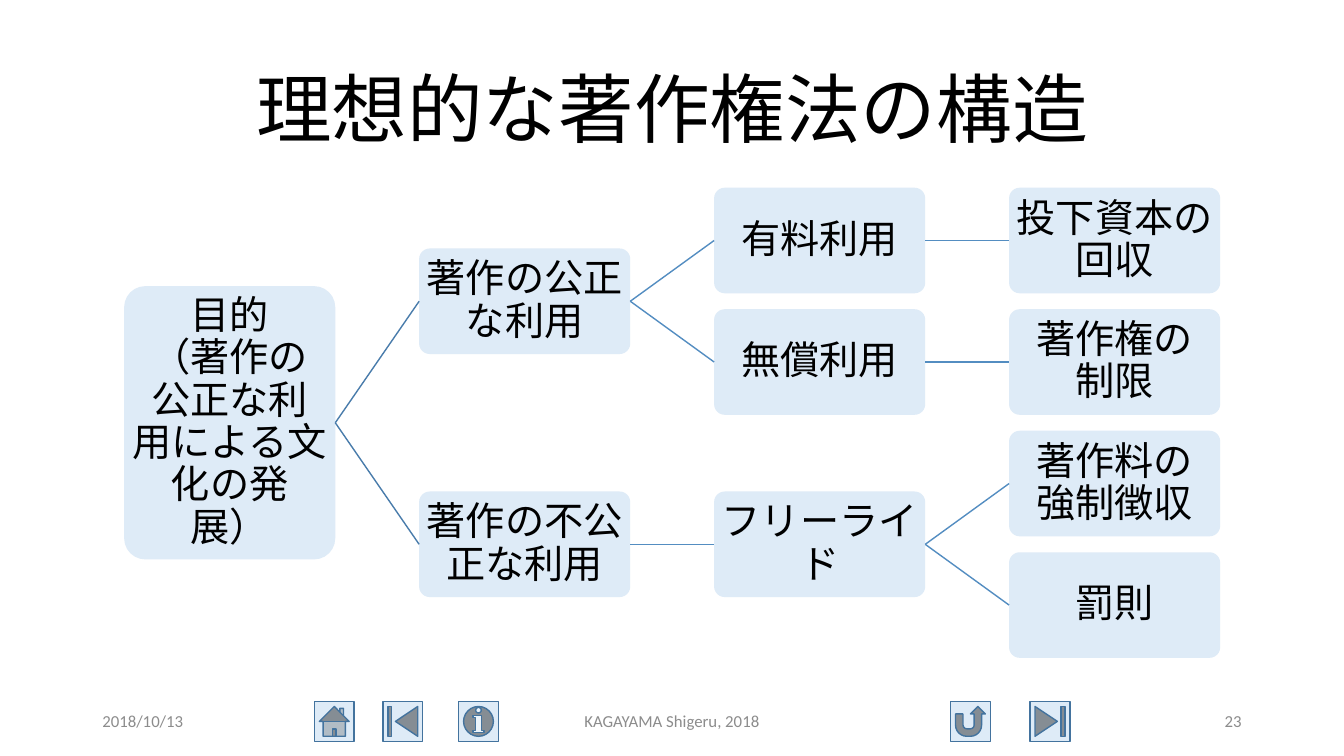
from lxml import etree
from pptx import Presentation
from pptx import util as u
from pptx.dml.color import RGBColor
from pptx.enum import shapes, text
from pptx.oxml.ns import qn

Pt = u.Pt
SHAPE = shapes.MSO_SHAPE
ALIGN = text.PP_ALIGN
LEFT, COL_STEP = 88.7, 210.7
TOP, ROW_STEP = 171.8, 86.8
BOX_W, BOX_H, ROOT_H = 150.8, 75.4, 195.2
PALE, BLACK, GREY = "DEEBF7", "000000", "8C8C8C"

NODES = [
    ("目的\n（著作の公正な利用による文化の発展）", 0, 1.5, None),
    ("著作の公正な利用", 1, 0.5, 0),
    ("有料利用", 2, 0, 1),
    ("投下資本の回収", 3, 0, 2),
    ("無償利用", 2, 1, 1),
    ("著作権の\n制限", 3, 1, 4),
    ("著作の不公正な利用", 1, 2.5, 0),
    ("フリーライド", 2, 2.5, 6),
    ("著作料の\n強制徴収", 3, 2, 7),
    ("罰則", 3, 3, 7),
]
BUTTONS = [
    (SHAPE.ACTION_BUTTON_HOME, 224.6),
    (SHAPE.ACTION_BUTTON_BEGINNING, 273.6),
    (SHAPE.ACTION_BUTTON_INFORMATION, 327.6),
    (SHAPE.ACTION_BUTTON_RETURN, 679),
    (SHAPE.ACTION_BUTTON_END, 735.8),
]
FOOTERS = [
    ("2018/10/13", 66, 216, ALIGN.LEFT),
    ("KAGAYAMA Shigeru, 2018", 318, 324, ALIGN.CENTER),
    ("23", 678, 216, ALIGN.RIGHT),
]


def rgb(value):
    return RGBColor.from_string(value)


def set_all(target, values):
    for name, value in values.items():
        setattr(target, name, value)


def write(sp, content, size, color, align, spacing=1.0, **frame):
    tf = sp.text_frame
    set_all(tf, {"word_wrap": True, "auto_size": text.MSO_AUTO_SIZE.NONE,
                 "vertical_anchor": text.MSO_ANCHOR.MIDDLE, **frame})
    p = tf.paragraphs[0]
    p.text = content
    set_all(p, {"alignment": align, "line_spacing": spacing})
    for r in p.runs:
        set_all(r.font, {"name": "Calibri", "size": Pt(size)})
        r.font.color.rgb = rgb(color)


def add_filled(s, kind, x, y, w, h, line=None):
    sp = s.shapes.add_shape(kind, Pt(x), Pt(y), Pt(w), Pt(h))
    sp.shadow.inherit = False
    sp.fill.solid()
    sp.fill.fore_color.rgb = rgb(PALE)
    if line:
        sp.line.color.rgb = rgb(line)
        sp.line.width = Pt(1)
    else:
        sp.line.fill.background()
    return sp


def add_node(s, content, col, row, height):
    y = TOP + row * ROW_STEP - height / 2
    sp = add_filled(s, SHAPE.ROUNDED_RECTANGLE, LEFT + col * COL_STEP, y, BOX_W, height)
    sp.adjustments[0] = 0.1
    sides = ("left", "top", "right", "bottom")
    write(sp, content, 28, BLACK, ALIGN.CENTER, 0.9,
          **{f"margin_{side}": Pt(1.4) for side in sides})
    return sp


def add_link(s, parent, child, color):
    cx = s.shapes.add_connector(shapes.MSO_CONNECTOR.STRAIGHT, 0, 0, 0, 0)
    cx.begin_connect(parent, 3)
    cx.end_connect(child, 1)
    cx.line.color.rgb = rgb(color)
    cx.line.width = Pt(1)
    etree.SubElement(cx._element.spPr, qn("a:effectLst"))


def add_tree(s):
    boxes = []
    for content, col, row, parent in NODES:
        box = add_node(s, content, col, row, BOX_H if col else ROOT_H)
        boxes.append(box)
        if parent is not None:
            add_link(s, boxes[parent], box, "497CAB" if col == 1 else "538DC1")


def add_title(s, content):
    sp = s.shapes.title
    set_all(sp, {"left": Pt(66), "top": Pt(28.8), "width": Pt(828), "height": Pt(104.4)})
    write(sp, content, 54, BLACK, ALIGN.CENTER, 0.9)


def add_footer(s, content, x, width, align):
    sp = s.shapes.add_textbox(Pt(x), Pt(500.5), Pt(width), Pt(28.8))
    write(sp, content, 12, GREY, align)


def main():
    prs = Presentation()
    set_all(prs, {"slide_width": Pt(960), "slide_height": Pt(540)})
    s = prs.slides.add_slide(prs.slide_layouts[5])
    for kind, x in BUTTONS:
        add_filled(s, kind, x, 501.1, 28.4, 28.4, "43739E")
    add_title(s, "理想的な著作権法の構造")
    add_tree(s)
    for footer in FOOTERS:
        add_footer(s, *footer)
    prs.save("out.pptx")


if __name__ == "__main__":
    main()
